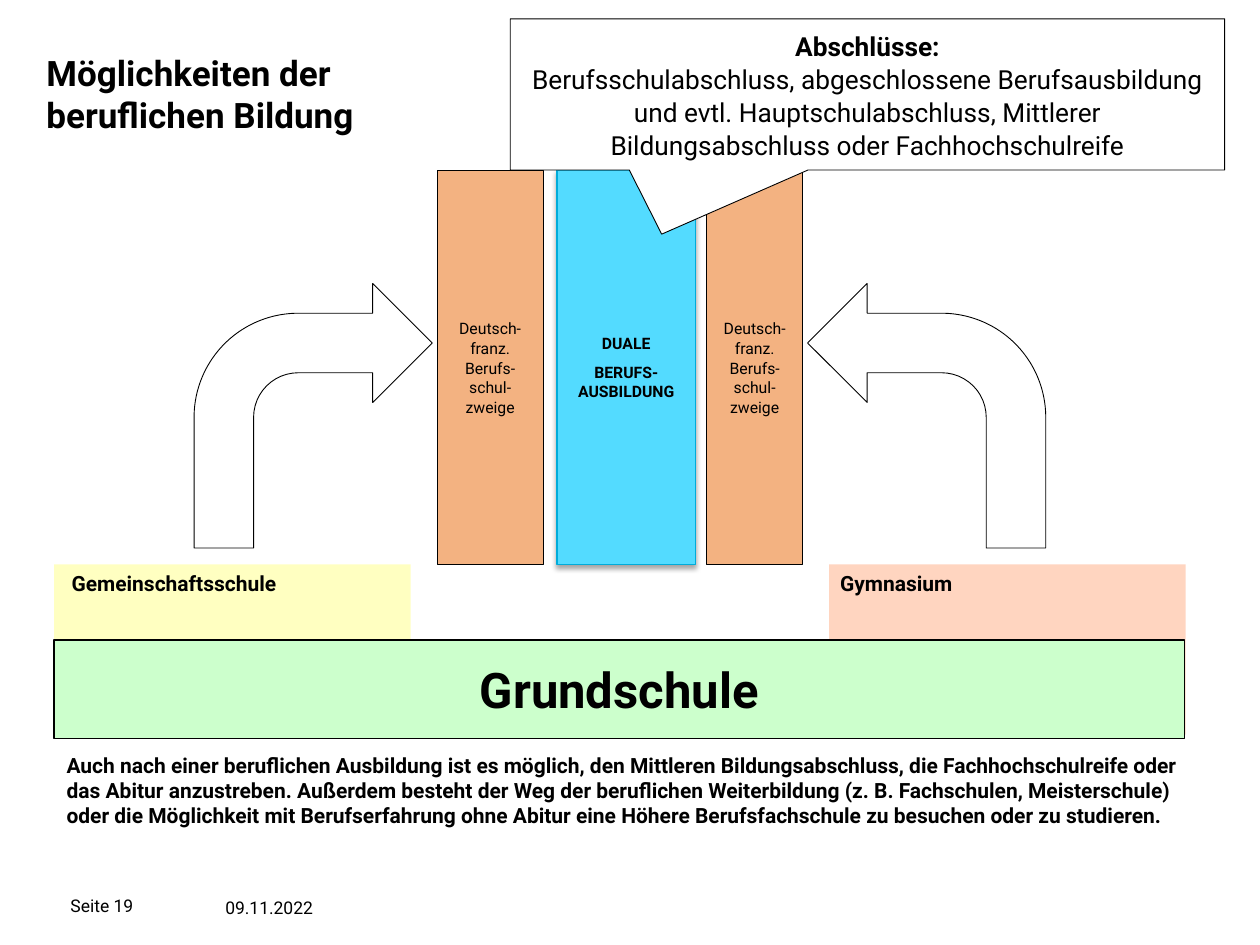
"""Build the slide on paths into vocational training."""
from lxml import etree
from pptx import Presentation, util as u
from pptx.dml.color import RGBColor
from pptx.enum import shapes, text
from pptx.oxml import ns

FONT, INK = "Roboto", "000000"
KIND = shapes.MSO_SHAPE
BRANCH = "Deutsch-franz. Berufs-schul-zweige"
NOTE = (
    "Auch nach einer beruflichen Ausbildung ist es möglich, den Mittleren "
    "Bildungsabschluss, die Fachhochschulreife oder das Abitur anzustreben. "
    "Außerdem besteht der Weg der beruflichen Weiterbildung (z. B. Fachschulen, "
    "Meisterschule) oder die Möglichkeit mit Berufserfahrung ohne Abitur eine "
    "Höhere Berufsfachschule zu besuchen oder zu studieren."
)
DEGREES = [
    "Abschlüsse:",
    "Berufsschulabschluss, abgeschlossene Berufsausbildung",
    "und evtl. Hauptschulabschluss, Mittlerer Bildungsabschluss oder Fachhochschulreife",
]
SCHOOLS = [
    ("Gemeinschaftsschule", 0.43, 0.47, "FFFF99"),
    ("Gymnasium", 6.58, 6.57, "FFBA97"),
]
LABELS = [
    (NOTE, (0.43, 5.92, 9.13, 0.91), 12, True),
    ("Möglichkeiten der\nberuflichen Bildung", (0.27, 0.36, 3.78, 0.77), 20, True),
    ("09.11.2022", (1.69, 7.07, 1.26, 0.24), 10, False),
]
TOP, TALL = 1.35, 3.13


def color(code):
    return RGBColor.from_string(code)


def child(node, tag, **attrs):
    return etree.SubElement(node, ns.qn(tag), attrs)


def write(shape, lines, size, bold=False, align=None, lead=None):
    frame = shape.text_frame
    frame.word_wrap = True
    for i, line in enumerate(lines):
        para = frame.add_paragraph() if i else frame.paragraphs[0]
        para.text = line
        para.alignment = align
        para.line_spacing = lead
        for run in para.runs:
            font = run.font
            font.name, font.size, font.bold = FONT, u.Pt(size), bold
            font.color.rgb = color(INK)
    return frame


def label(slide, line, box, size, bold):
    shape = slide.shapes.add_textbox(*map(u.Inches, box))
    return write(shape, [line], size, bold)


def block(slide, box, fill, edge=None, width=0.5, alpha=None, kind=KIND.RECTANGLE):
    shape = slide.shapes.add_shape(kind, *map(u.Inches, box))
    shape.shadow.inherit = False
    shape.fill.solid()
    shape.fill.fore_color.rgb = color(fill)
    if alpha:
        tint = shape.element.spPr.find(".//" + ns.qn("a:srgbClr"))
        child(tint, "a:alpha", val=str(alpha * 1000))
    if edge:
        shape.line.color.rgb = color(edge)
        shape.line.width = u.Pt(width)
    else:
        shape.line.fill.background()
    return shape


def center(shape, lines, size, bold=False, lead=None):
    frame = write(shape, lines, size, bold, text.PP_ALIGN.CENTER, lead)
    frame.vertical_anchor = text.MSO_ANCHOR.MIDDLE
    return frame


def branch(slide, left, width):
    shape = block(slide, (left, TOP, width, TALL), "E96705", INK, alpha=50)
    center(shape, [BRANCH], 9, lead=1.05)


def dual(slide):
    shape = block(slide, (4.42, TOP, 1.1, TALL), "53DBFF", "00ACDA", 0.75)
    frame = center(shape, ["DUALE", "BERUFS-AUSBILDUNG"], 9, True)
    last = frame.paragraphs[1]
    last.space_before = last.space_after = u.Pt(6)
    glow = child(
        shape.element.spPr.find(ns.qn("a:effectLst")), "a:outerShdw",
        blurRad=str(u.Pt(3.1)), dist=str(u.Pt(1.8)), dir="5400000", rotWithShape="0",
    )
    child(child(glow, "a:srgbClr", val=INK), "a:alpha", val="35000")


def callout(slide):
    shape = block(slide, (4.05, 0.15, 5.67, 1.2), "FFFFFF", INK,
                  kind=KIND.RECTANGULAR_CALLOUT)
    shape.adjustments[0], shape.adjustments[1] = -0.288, 0.924
    frame = center(shape, DEGREES, 15, lead=1.05)
    frame.paragraphs[0].runs[0].font.bold = True


def main():
    deck = Presentation()
    deck.slide_width, deck.slide_height = u.Inches(10), u.Inches(7.5)
    slide = deck.slides.add_slide(deck.slide_layouts[6])

    page = label(slide, "Seite 19", (0.56, 7.07, 1.26, 0.24), 10, False)
    page.margin_left = page.margin_right = page.margin_top = page.margin_bottom = 0
    page.vertical_anchor = text.MSO_ANCHOR.MIDDLE

    branch(slide, 5.61, 0.76)
    for name, left, start, fill in SCHOOLS:
        block(slide, (left, 4.48, 2.83, 1.35), fill, alpha=60)
        label(slide, name, (start, 4.48, 2.63, 0.3), 12, True)
    base = block(slide, (0.43, 5.08, 8.97, 0.78), "CCFFCC", INK, 0.75)
    center(base, ["Grundschule"], 28, True)
    dual(slide)
    for item in LABELS:
        label(slide, *item)
    callout(slide)
    branch(slide, 3.47, 0.84)

    for left, flip in ((1.54, "0"), (6.41, "1")):
        arrow = block(slide, (left, 2.25, 1.89, 2.1), "FFFFFF", INK,
                      kind=KIND.BENT_ARROW)
        arrow.element.spPr.xfrm.set("flipH", flip)
    deck.save("out.pptx")


if __name__ == "__main__":
    main()
